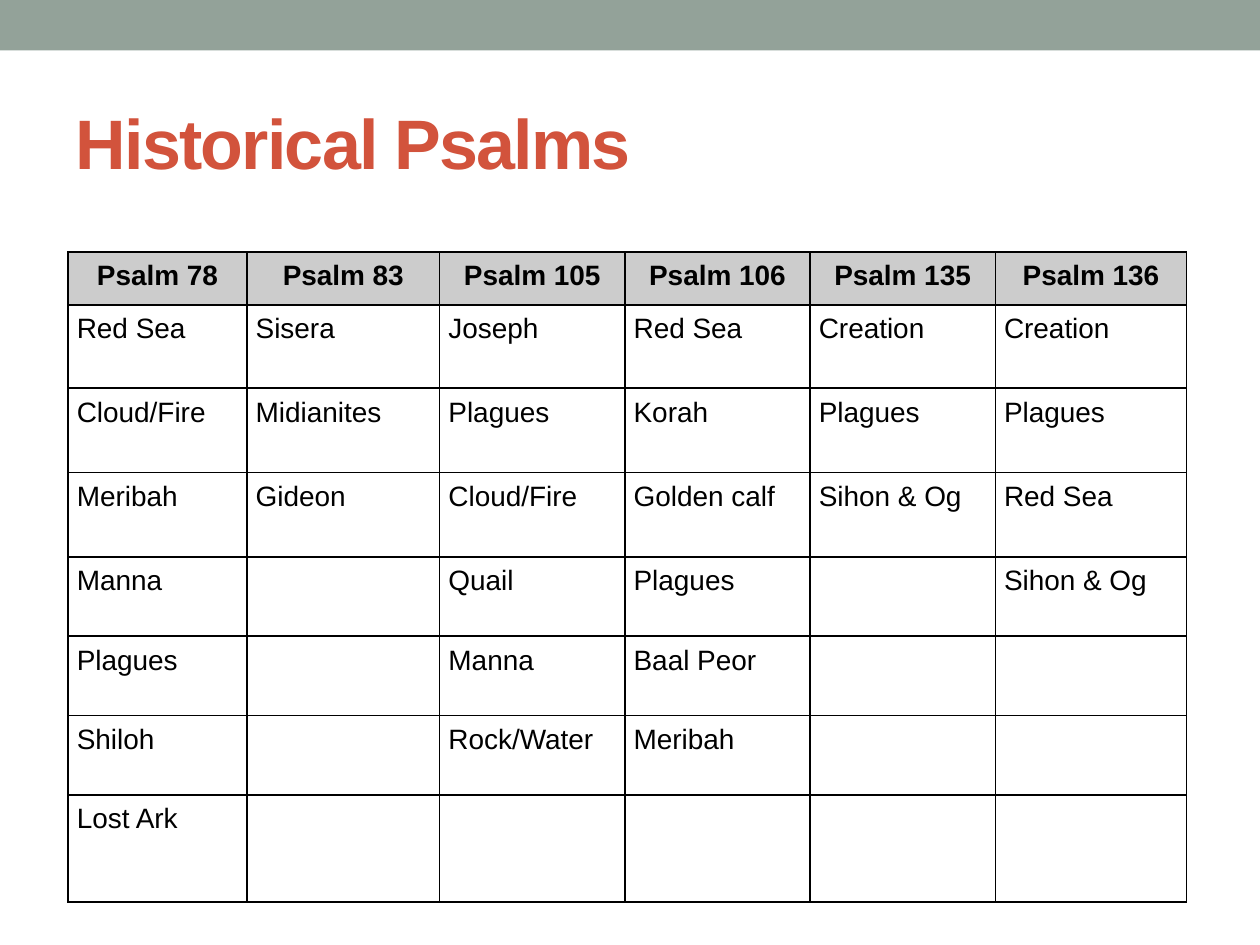
"""Build the Historical Psalms slide."""
from lxml import etree
from pptx import Presentation
from pptx.dml.color import RGBColor
from pptx.enum.shapes import MSO_SHAPE
from pptx.enum.text import MSO_ANCHOR, PP_ALIGN
from pptx.oxml.ns import qn
from pptx.util import Inches, Pt

RECT = MSO_SHAPE.RECTANGLE
MIDDLE = MSO_ANCHOR.MIDDLE
LEFT, CENTER = PP_ALIGN.LEFT, PP_ALIGN.CENTER

TITLE = "Historical Psalms"
PSALMS = {
    "Psalm 78": ["Red Sea", "Cloud/Fire", "Meribah", "Manna",
                 "Plagues", "Shiloh", "Lost Ark"],
    "Psalm 83": ["Sisera", "Midianites", "Gideon"],
    "Psalm 105": ["Joseph", "Plagues", "Cloud/Fire", "Quail",
                  "Manna", "Rock/Water"],
    "Psalm 106": ["Red Sea", "Korah", "Golden calf", "Plagues",
                  "Baal Peor", "Meribah"],
    "Psalm 135": ["Creation", "Plagues", "Sihon & Og"],
    "Psalm 136": ["Creation", "Plagues", "Red Sea", "Sihon & Og"],
}
COLS = [1.42, 1.53, 1.47, 1.47, 1.47, 1.52]
ROWS = [0.42, 0.66, 0.67, 0.67, 0.63, 0.63, 0.63, 0.85]
COLORS = {"band": "93A299", "title": "D2533C", "head": "CCCCCC", "ink": "000000"}
FONT = "Arial"
PAD = Inches(0.07)


def color(name):
    return RGBColor.from_string(COLORS[name])


def add_run(para, text, size, ink, bold):
    run = para.add_run()
    run.text = text
    font = run.font
    font.name, font.size, font.bold = FONT, Pt(size), bold
    font.color.rgb = color(ink)
    return run


def add_border(cell):
    props = cell._tc.get_or_add_tcPr()
    for side in ("lnL", "lnR", "lnT", "lnB"):
        line = etree.SubElement(props, qn(f"a:{side}"), w=str(Pt(1)))
        fill = etree.SubElement(line, qn("a:solidFill"))
        etree.SubElement(fill, qn("a:srgbClr"), val=COLORS["ink"])


def fill_cell(cell, text, head):
    add_border(cell)
    cell.margin_left = cell.margin_right = PAD
    cell.margin_top = cell.margin_bottom = PAD
    if head:
        cell.fill.solid()
        cell.fill.fore_color.rgb = color("head")
    else:
        cell.fill.background()
    if text:
        para = cell.text_frame.paragraphs[0]
        para.alignment = CENTER if head else LEFT
        add_run(para, text, 16, "ink", head)


def add_band(slide, width):
    band = slide.shapes.add_shape(RECT, 0, 0, width, Inches(0.4))
    band.shadow.inherit = False
    band.fill.solid()
    band.fill.fore_color.rgb = color("band")
    band.line.fill.background()


def add_title(slide):
    title = slide.shapes.title
    title.left, title.top = Inches(0.5), Inches(0.58)
    title.width, title.height = Inches(9), Inches(1.08)
    frame = title.text_frame
    frame.vertical_anchor = MIDDLE
    para = frame.paragraphs[0]
    para.alignment = LEFT
    run = add_run(para, TITLE, 40, "title", True)
    run.font._element.set("spc", "-100")


def add_grid(slide):
    table = slide.shapes.add_table(
        len(ROWS), len(COLS), Inches(0.54), Inches(2),
        Inches(sum(COLS)), Inches(sum(ROWS))).table
    table.first_row = table.horz_banding = False
    for row, tall in zip(table.rows, ROWS):
        row.height = Inches(tall)
    for c, (psalm, events) in enumerate(PSALMS.items()):
        table.columns[c].width = Inches(COLS[c])
        texts = [psalm] + events
        texts += [""] * (len(ROWS) - len(texts))
        for r, text in enumerate(texts):
            fill_cell(table.cell(r, c), text, r == 0)


def main():
    deck = Presentation()
    deck.slide_width, deck.slide_height = Inches(10), Inches(7.5)
    slide = deck.slides.add_slide(deck.slide_layouts[5])
    add_band(slide, deck.slide_width)
    add_title(slide)
    add_grid(slide)
    deck.save("out.pptx")


if __name__ == "__main__":
    main()
